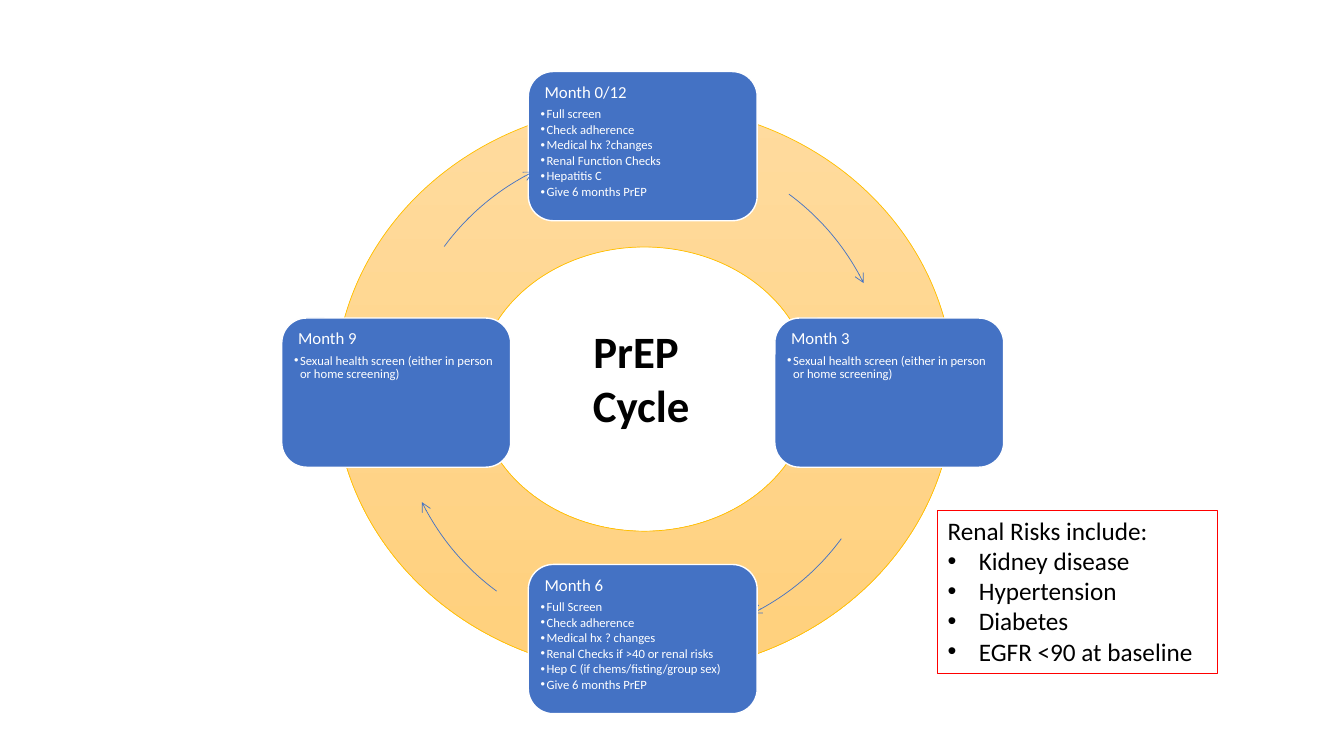
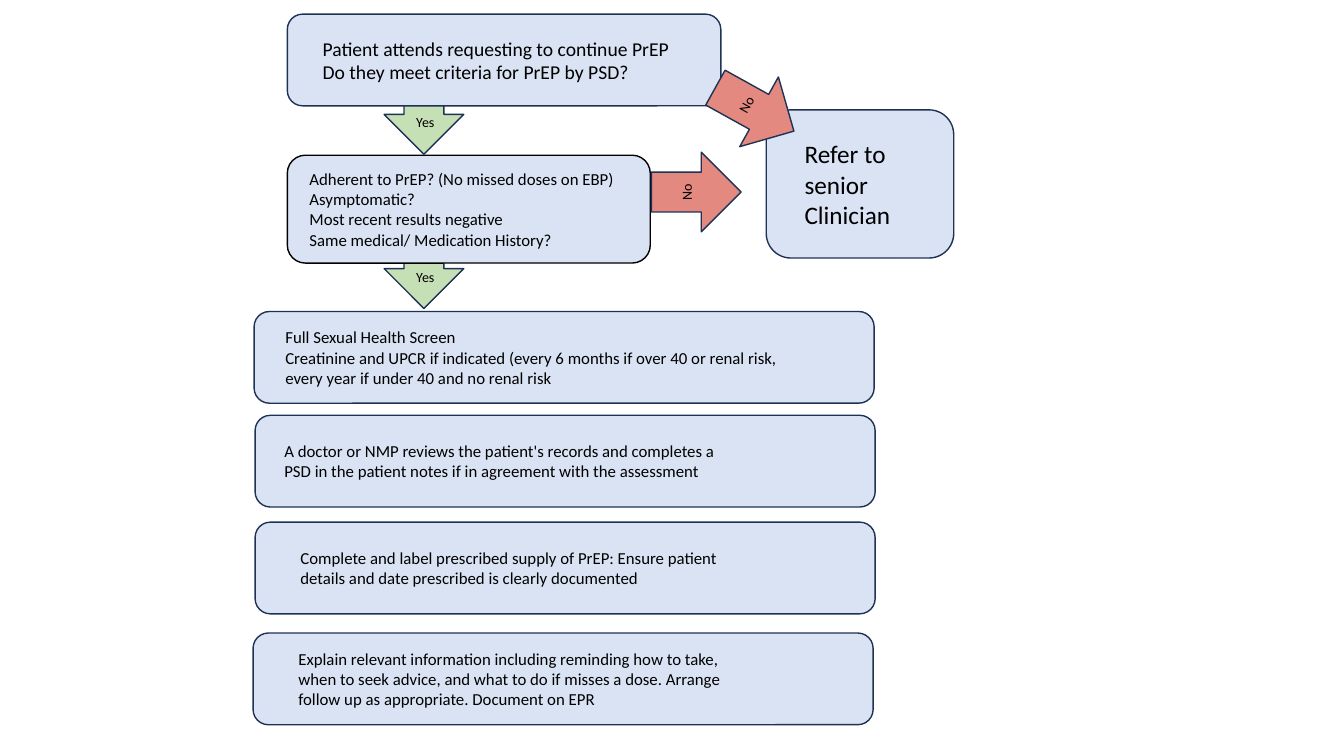
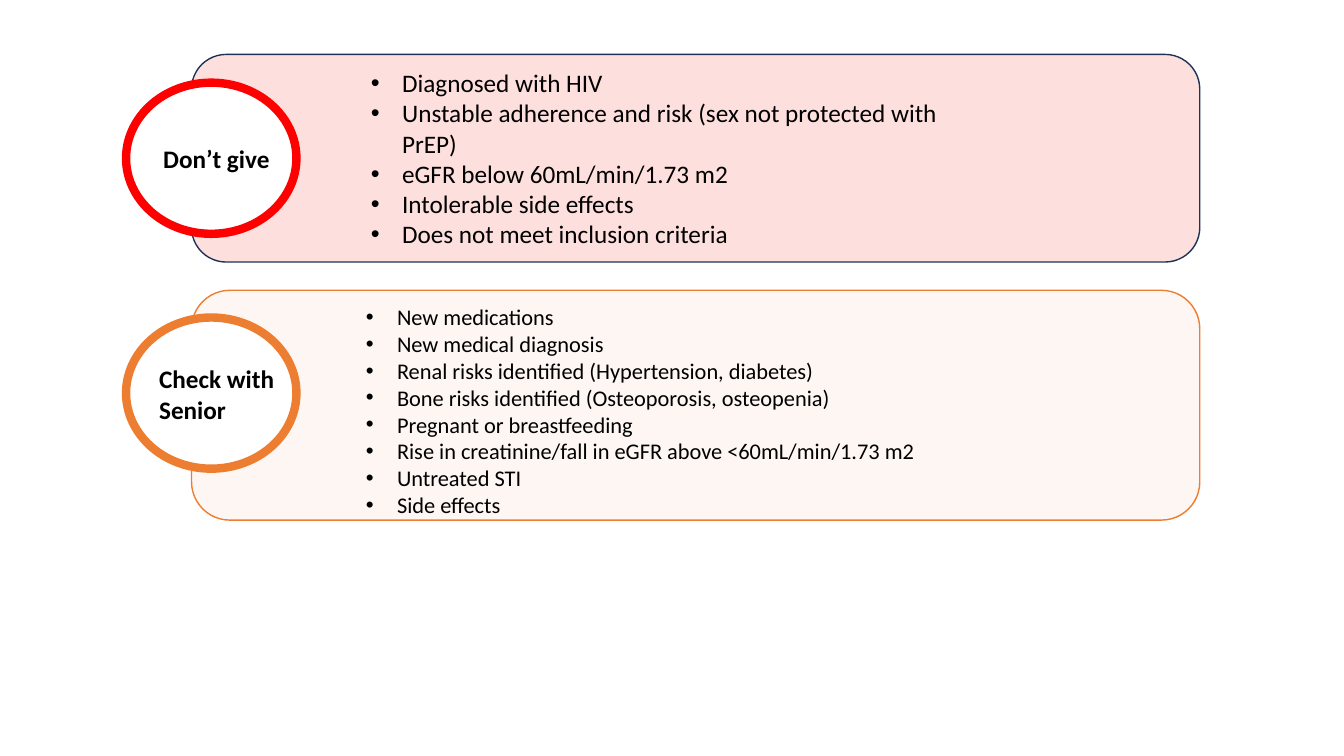
from dataclasses import dataclass
from math import cos, radians, sin

from lxml.etree import SubElement
from pptx import Presentation
from pptx.dml.color import RGBColor
from pptx.enum.shapes import MSO_SHAPE
from pptx.enum.text import MSO_ANCHOR, PP_ALIGN
from pptx.oxml.ns import qn
from pptx.shapes.autoshape import Shape
from pptx.slide import Slide
from pptx.text.text import TextFrame, _Paragraph
from pptx.util import Inches, Pt

COLORS = {
    "black": "000000", "white": "FFFFFF", "red": "FF0000", "orange": "ED7D31",
    "blue": "4472C4", "navy": "1E3256", "pale_blue": "DAE3F3",
    "green": "C5E0B4", "salmon": "E3897F", "rose": "FA9C93", "peach": "FBE5D6",
    "gold": "FFC000", "ring_top": "FFDB9E", "ring_bottom": "FFD07C",
}
FONT = "Calibri"
CORNER_INSET = 0.0488  # text inset of a rounded rectangle, as a share of its height
CYCLE_X, CYCLE_Y, CYCLE_RADIUS = 6.375, 3.895, 2.445
CARD_WIDTH, CARD_HEIGHT = 2.27, 1.48


@dataclass(frozen=True)
class Box:
    left: float
    top: float
    width: float
    height: float


@dataclass(frozen=True)
class Stage:
    angle: int
    title: str
    tasks: tuple[str, ...]


@dataclass(frozen=True)
class Step:
    box: Box
    text_left: float
    text_width: float
    lines: tuple[str, ...]
    size: int = 12
    outline: str = "navy"


@dataclass(frozen=True)
class Arrow:
    left: float
    top: float
    fill: str
    rotation: int = 0
    label: str = ""


@dataclass(frozen=True)
class Advice:
    band: Box
    fill: str
    outline: str
    ring: str
    badge_top: float
    title: str
    title_box: Box
    items: tuple[str, ...]
    items_box: Box
    size: int


SCREENING = ("Sexual health screen (either in person or home screening)",)
STAGES = (
    Stage(270, "Month 0/12", (
        "Full screen", "Check adherence", "Medical hx ?changes",
        "Renal Function Checks", "Hepatitis C", "Give 6 months PrEP")),
    Stage(0, "Month 3", SCREENING),
    Stage(90, "Month 6", (
        "Full Screen", "Check adherence", "Medical hx ? changes",
        "Renal Checks if >40 or renal risks",
        "Hep C (if chems/fisting/group sex)", "Give 6 months PrEP")),
    Stage(180, "Month 9", SCREENING),
)
RENAL_RISKS = ("Kidney disease", "Hypertension", "Diabetes", "EGFR <90 at baseline")

STEPS = (
    Step(Box(2.85, 0.14, 4.3, 0.91), 3.1, 3.79, (
        "Patient attends requesting to continue PrEP",
        "Do they meet criteria for PrEP by PSD?"), 14),
    Step(Box(2.85, 1.54, 3.6, 1.07), 2.97, 3.36, (
        "Adherent to PrEP? (No missed doses on EBP)", "Asymptomatic?",
        "Most recent results negative", "Same medical/ Medication History?"),
        outline="black"),
    Step(Box(7.6, 1.09, 1.86, 1.47), 7.88, 1.29, ("Refer to senior Clinician",), 18),
    Step(Box(2.52, 3.09, 6.15, 0.91), 2.73, 5.26, (
        "Full Sexual Health Screen",
        "Creatinine and UPCR if indicated (every 6 months if over 40 or renal risk, "
        "every year if under 40 and no renal risk")),
    Step(Box(2.53, 4.12, 6.15, 0.91), 2.72, 4.58, (
        "A doctor or NMP reviews the patient's records and completes a PSD in the "
        "patient notes if in agreement with the assessment",)),
    Step(Box(2.53, 5.18, 6.15, 0.91), 2.88, 4.58, (
        "Complete and label prescribed supply of PrEP: Ensure patient details and "
        "date prescribed is clearly documented",)),
    Step(Box(2.51, 6.28, 6.15, 0.91), 2.86, 4.58, (
        "Explain relevant information including reminding how to take, when to seek "
        "advice, and what to do if misses a dose. Arrange follow up as appropriate. "
        "Document on EPR",)),
)
YES_ARROWS = (Arrow(3.81, 0.64, "green"), Arrow(3.81, 2.17, "green"))
NO_ARROWS = (
    Arrow(7.09, 0.64, "salmon", 299, "No"),
    Arrow(6.51, 1.46, "salmon", 270, "No"),
)

ADVICE = (
    Advice(
        Box(1.9, 0.54, 10, 2.06), "rose", "navy", "red", 0.82,
        "Don’t give", Box(1.52, 1.37, 1.8, 0.4),
        ("Diagnosed with HIV",
         "Unstable adherence and risk (sex not protected with PrEP)",
         "eGFR below 60mL/min/1.73 m2", "Intolerable side effects",
         "Does not meet inclusion criteria"),
        Box(3.58, 0.62, 6.05, 2.22), 18),
    Advice(
        Box(1.9, 2.88, 10, 2.28), "peach", "orange", "orange", 3.15,
        "Check with Senior", Box(1.48, 3.56, 1.92, 0.71),
        ("New medications", "New medical diagnosis",
         "Renal risks identified (Hypertension, diabetes)",
         "Bone risks identified (Osteoporosis, osteopenia)",
         "Pregnant or breastfeeding",
         "Rise in creatinine/fall in eGFR above <60mL/min/1.73 m2",
         "Untreated STI", "Side effects"),
        Box(3.53, 2.96, 7.1, 3.03), 16),
)


def color(name: str) -> RGBColor:
    return RGBColor.from_string(COLORS[name])


def add_figure(slide: Slide, kind: MSO_SHAPE, box: Box, fill: str | None,
               outline: str, weight: float = 1) -> Shape:
    shape = slide.shapes.add_shape(
        kind, Inches(box.left), Inches(box.top), Inches(box.width), Inches(box.height))
    shape.shadow.inherit = False
    if fill:
        shape.fill.solid()
        shape.fill.fore_color.rgb = color(fill)
    else:
        shape.fill.background()
    shape.line.color.rgb = color(outline)
    shape.line.width = Pt(weight)
    shape.text_frame.word_wrap = True
    return shape


def add_text_box(slide: Slide, box: Box) -> TextFrame:
    shape = slide.shapes.add_textbox(
        Inches(box.left), Inches(box.top), Inches(box.width), Inches(box.height))
    shape.text_frame.word_wrap = True
    return shape.text_frame


def indent(paragraph: _Paragraph, margin: float, bullet: bool = True) -> None:
    """Set the left margin, with a bullet hanging in it when asked."""
    properties = paragraph._p.get_or_add_pPr()
    properties.set("marL", str(Inches(margin)))
    if bullet:
        properties.set("indent", str(-Inches(margin)))
        SubElement(properties, qn("a:buFont"), typeface="Arial")
        SubElement(properties, qn("a:buChar"), char="•")


def add_line(frame: TextFrame, text: str, size: int, ink: str = "black",
             bold: bool = False, align: PP_ALIGN = PP_ALIGN.LEFT) -> _Paragraph:
    """Write text into the empty first paragraph, or into a new one."""
    first = frame.paragraphs[0]
    paragraph = frame.add_paragraph() if first.runs else first
    paragraph.alignment = align
    run = paragraph.add_run()
    run.text = text
    run.font.name = FONT
    run.font.size = Pt(size)
    run.font.bold = bold
    run.font.color.rgb = color(ink)
    return paragraph


def add_bullets(frame: TextFrame, items: tuple[str, ...], size: int) -> None:
    for item in items:
        indent(add_line(frame, item, size), 0.31)


def add_stage(slide: Slide, stage: Stage) -> None:
    center_x = CYCLE_X + CYCLE_RADIUS * cos(radians(stage.angle))
    center_y = CYCLE_Y + CYCLE_RADIUS * sin(radians(stage.angle))
    box = Box(center_x - CARD_WIDTH / 2, center_y - CARD_HEIGHT / 2,
              CARD_WIDTH, CARD_HEIGHT)
    frame = add_figure(
        slide, MSO_SHAPE.ROUNDED_RECTANGLE, box, "blue", "white").text_frame
    frame.vertical_anchor = MSO_ANCHOR.TOP
    frame.margin_left = frame.margin_right = Inches(0.05)
    frame.margin_top = frame.margin_bottom = Inches(0.05)
    title = add_line(frame, stage.title, 12, "white")
    title.line_spacing, title.space_after = 0.9, Pt(4.2)
    indent(title, 0.04, bullet=False)
    for task in stage.tasks:
        paragraph = add_line(frame, task, 9, "white")
        paragraph.line_spacing, paragraph.space_after = 0.9, Pt(1.35)
        indent(paragraph, 0.06)


def add_cycle_arrow(slide: Slide, stage: Stage) -> None:
    """Draw the arc that leads clockwise from a stage to the next one."""
    diameter = 2 * CYCLE_RADIUS
    box = Box(CYCLE_X - CYCLE_RADIUS, CYCLE_Y - CYCLE_RADIUS, diameter, diameter)
    arc = add_figure(slide, MSO_SHAPE.ARC, box, None, "blue", 0.5)
    for index, offset in enumerate((36.35, 63.6)):
        arc.adjustments[index] = (stage.angle + offset) % 360 * 0.6
    SubElement(arc.line._get_or_add_ln(), qn("a:tailEnd"), type="arrow")


def add_step(slide: Slide, step: Step) -> None:
    box = step.box
    frame = add_figure(slide, MSO_SHAPE.ROUNDED_RECTANGLE, box,
                       "pale_blue", step.outline).text_frame
    frame.vertical_anchor = MSO_ANCHOR.MIDDLE
    corner = CORNER_INSET * min(box.width, box.height)
    left = step.text_left - box.left + 0.1 - corner
    frame.margin_left = Inches(left)
    frame.margin_right = Inches(box.width - 2 * corner - left - step.text_width + 0.2)
    frame.margin_top = frame.margin_bottom = 0
    for line in step.lines:
        add_line(frame, line, step.size)


def add_arrow(slide: Slide, arrow: Arrow) -> None:
    box = Box(arrow.left, arrow.top, 0.79, 0.89)
    shape = add_figure(slide, MSO_SHAPE.DOWN_ARROW, box, arrow.fill, "navy")
    shape.rotation = arrow.rotation
    if arrow.label:
        shape.text_frame.vertical_anchor = MSO_ANCHOR.MIDDLE
        add_line(shape.text_frame, arrow.label, 10, align=PP_ALIGN.CENTER)


def add_advice(slide: Slide, advice: Advice) -> None:
    band = add_figure(slide, MSO_SHAPE.ROUNDED_RECTANGLE, advice.band,
                      advice.fill, advice.outline)
    fill_color = band._element.spPr.find(qn("a:solidFill")).find(qn("a:srgbClr"))
    SubElement(fill_color, qn("a:alpha"), val="31000")
    add_figure(slide, MSO_SHAPE.OVAL, Box(1.25, advice.badge_top, 1.69, 1.5),
               "white", advice.ring, 6)
    add_line(add_text_box(slide, advice.title_box), advice.title, 18, bold=True)
    add_bullets(add_text_box(slide, advice.items_box), advice.items, advice.size)


def build_cycle(slide: Slide) -> None:
    ring = add_figure(slide, MSO_SHAPE.DONUT, Box(3.32, 1.04, 6.14, 5.64),
                      None, "gold", 0.5)
    ring.fill.gradient()
    ring.fill.gradient_angle = 270
    for stop, name in zip(ring.fill.gradient_stops, ("ring_top", "ring_bottom")):
        stop.color.rgb = color(name)
    for stage in STAGES:
        add_stage(slide, stage)
        add_cycle_arrow(slide, stage)
    heading = add_text_box(slide, Box(5.13, 3.16, 2.46, 1.18))
    for word in ("PrEP ", "Cycle"):
        add_line(heading, word, 32, bold=True, align=PP_ALIGN.CENTER)
    risks = add_figure(slide, MSO_SHAPE.RECTANGLE, Box(9.3, 5.06, 2.78, 1.62),
                       None, "red", 0.75).text_frame
    risks.vertical_anchor = MSO_ANCHOR.TOP
    add_line(risks, "Renal Risks include:", 18)
    add_bullets(risks, RENAL_RISKS, 18)


def build_pathway(slide: Slide) -> None:
    for arrow in YES_ARROWS:
        add_arrow(slide, arrow)
    for step in STEPS:
        add_step(slide, step)
    for arrow in NO_ARROWS:
        add_arrow(slide, arrow)
    for arrow in YES_ARROWS:
        label_box = Box(arrow.left + 0.22, arrow.top + 0.44, 0.56, 0.27)
        add_line(add_text_box(slide, label_box), "Yes", 10)


def build_advice(slide: Slide) -> None:
    for advice in ADVICE:
        add_advice(slide, advice)


def main() -> None:
    presentation = Presentation()
    presentation.slide_width = Inches(13.33)
    presentation.slide_height = Inches(7.5)
    blank = presentation.slide_layouts[6]
    for build in (build_cycle, build_pathway, build_advice):
        build(presentation.slides.add_slide(blank))
    presentation.save("out.pptx")


if __name__ == "__main__":
    main()
